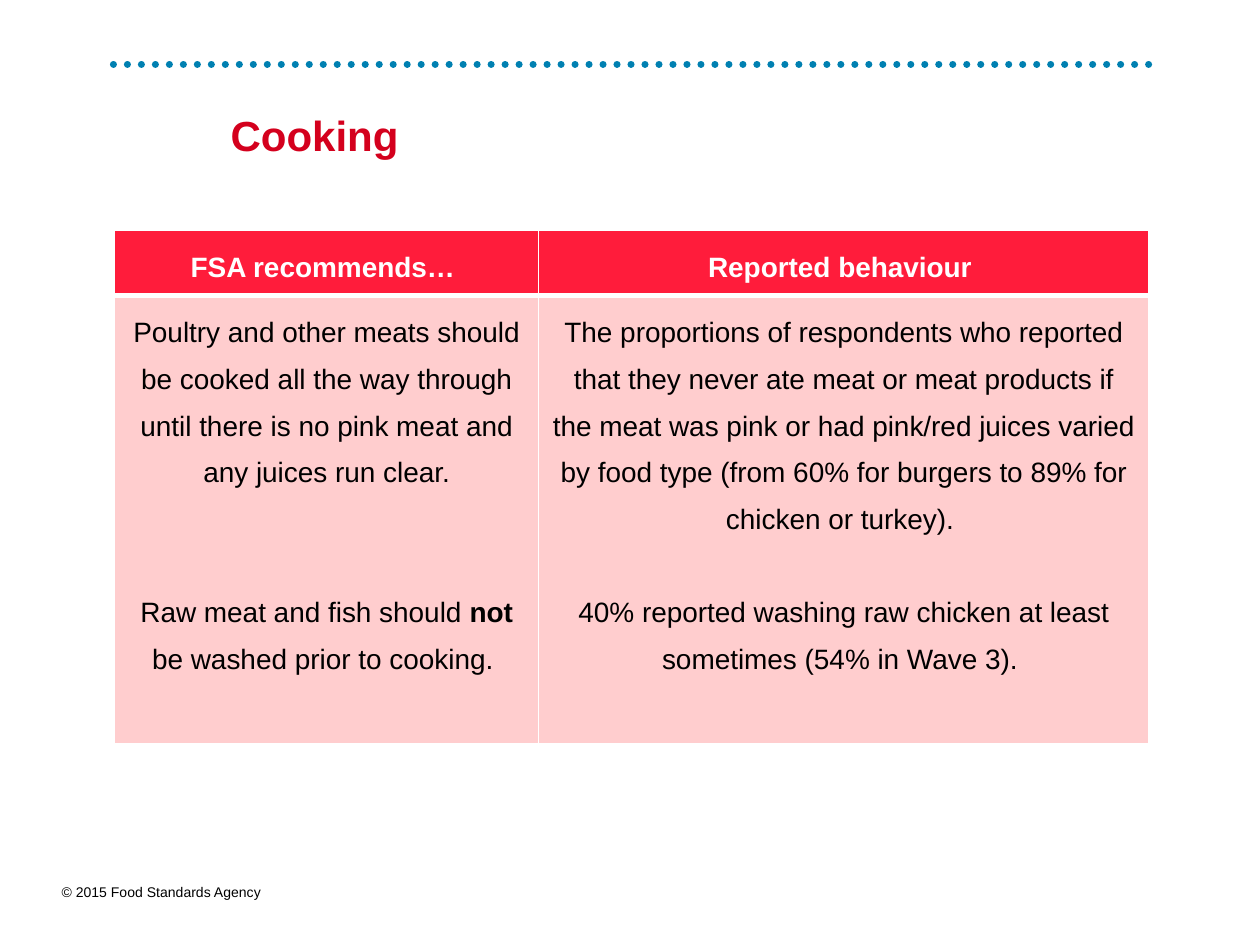
import pptx
import pptx.dml.color
import pptx.enum.text
import pptx.oxml
import pptx.oxml.ns
import pptx.util
from pptx.dml.color import RGBColor

WHITE = RGBColor(0xFF, 0xFF, 0xFF)
BLACK = RGBColor(0, 0, 0)
DOT_BLUE = RGBColor(0x00, 0x80, 0xB1)
TITLE_RED = RGBColor(0xD4, 0x00, 0x1D)
HEADER_RED = RGBColor(0xFF, 0x1C, 0x3B)
BODY_PINK = RGBColor(0xFF, 0xCD, 0xCE)

WIDTH = pptx.util.Inches(10)
HEIGHT = pptx.util.Inches(7.5)
LEFT = 0.091
CONTENT_WIDTH = 0.821
COLUMN_SHARES = (0.41, 0.59)
LINE_PITCH = 26.7  # points, for 16 pt text at 1.5 lines

# Each paragraph is (lines of gap before it, [(text, bold), ...]).
HEADERS = ("FSA recommends… ", "Reported behaviour ")
FINDINGS = (
    [
        (0, [("Poultry and other meats should be cooked all the way through "
              "until there is no pink meat and any juices run clear.", False)]),
        (2, [("Raw meat and fish should ", False), ("not", True),
             (" be washed prior to cooking. ", False)]),
    ],
    [
        (0, [("The proportions of respondents who reported that they never ate "
              "meat or meat products if the meat was pink or had pink/red juices "
              "varied by food type (from 60% for burgers to 89% for chicken or "
              "turkey). ", False)]),
        (1, [("40% reported washing raw chicken at least sometimes "
              "(54% in Wave 3). ", False)]),
    ],
)


def across(share):
    return int(WIDTH * share)


def down(share):
    return int(HEIGHT * share)


def style(font, size, color, bold=False):
    font.name = "Arial"
    font.size = pptx.util.Pt(size)
    font.bold = bold
    font.color.rgb = color


def add_dotted_rule(slide):
    rule = slide.shapes.add_connector(
        pptx.enum.shapes.MSO_CONNECTOR.STRAIGHT,
        across(0.09), down(0.068), across(0.913), down(0.068))
    rule.line.color.rgb = DOT_BLUE
    rule.line.width = pptx.util.Pt(4)
    rule.line.dash_style = pptx.enum.dml.MSO_LINE.ROUND_DOT
    rule.line._get_or_add_ln().set("cap", "rnd")
    properties = rule._element.spPr
    properties.append(pptx.oxml.parse_xml(
        f"<a:effectLst {pptx.oxml.ns.nsdecls('a')}/>"))


def add_title(slide, text):
    title = slide.shapes.title
    title.left, title.top = across(LEFT), down(0.076)
    title.width, title.height = across(CONTENT_WIDTH), down(0.14)
    frame = title.text_frame
    frame.text = text
    frame.margin_left = pptx.util.Inches(0.92)
    frame.margin_top = frame.margin_right = frame.margin_bottom = 0
    frame.vertical_anchor = pptx.enum.text.MSO_ANCHOR.MIDDLE
    heading = frame.paragraphs[0]
    heading.alignment = pptx.enum.text.PP_ALIGN.LEFT
    heading.line_spacing = 0.9
    style(heading.runs[0].font, 24, TITLE_RED, True)


def add_copyright(slide, text):
    notice = slide.shapes.add_textbox(
        across(0.039), down(0.928), across(0.181), down(0.032))
    notice.text_frame.word_wrap = False
    notice.text_frame.text = text
    style(notice.text_frame.paragraphs[0].runs[0].font, 8, BLACK)


def add_borders(cell, bottom_width):
    """Draw white cell edges; must run before the cell gets its fill."""
    properties = cell._tc.get_or_add_tcPr()
    for edge, points in (("L", 1), ("R", 1), ("T", 1), ("B", bottom_width)):
        properties.append(pptx.oxml.parse_xml(
            f"<a:ln{edge} {pptx.oxml.ns.nsdecls('a')} w='{pptx.util.Pt(points)}'>"
            f"<a:solidFill><a:srgbClr val='{WHITE}'/></a:solidFill></a:ln{edge}>"))


def fill_cell(cell, paragraphs, background, color, bottom_width=1):
    add_borders(cell, bottom_width)
    cell.fill.solid()
    cell.fill.fore_color.rgb = background
    frame = cell.text_frame
    for index, (gap, pieces) in enumerate(paragraphs):
        paragraph = frame.add_paragraph() if index else frame.paragraphs[0]
        paragraph.alignment = pptx.enum.text.PP_ALIGN.CENTER
        paragraph.line_spacing = 1.5
        if gap:
            paragraph.space_before = pptx.util.Pt(gap * LINE_PITCH)
        for text, bold in pieces:
            run = paragraph.add_run()
            run.text = text
            style(run.font, 16, color, bold)


def add_findings_table(slide):
    row_heights = (down(0.069), down(0.474))
    table = slide.shapes.add_table(
        2, 2, across(LEFT), down(0.244),
        across(CONTENT_WIDTH), sum(row_heights)).table
    for row, height in zip(table.rows, row_heights):
        row.height = height
    for index, share in enumerate(COLUMN_SHARES):
        table.columns[index].width = across(CONTENT_WIDTH * share)
        header = [(0, [(HEADERS[index], True)])]
        fill_cell(table.cell(0, index), header, HEADER_RED, WHITE, 3)
        fill_cell(table.cell(1, index), FINDINGS[index], BODY_PINK, BLACK)
        # The heavy edge is shared by both rows.
        edge = table.cell(1, index)._tc.tcPr.find(pptx.oxml.ns.qn("a:lnT"))
        edge.set("w", str(pptx.util.Pt(3)))


def main():
    deck = pptx.Presentation()
    deck.slide_width, deck.slide_height = WIDTH, HEIGHT
    slide = deck.slides.add_slide(deck.slide_layouts[5])
    add_dotted_rule(slide)
    add_copyright(slide, "© 2015 Food Standards Agency")
    add_title(slide, "Cooking")
    add_findings_table(slide)
    deck.save("out.pptx")


if __name__ == "__main__":
    main()
